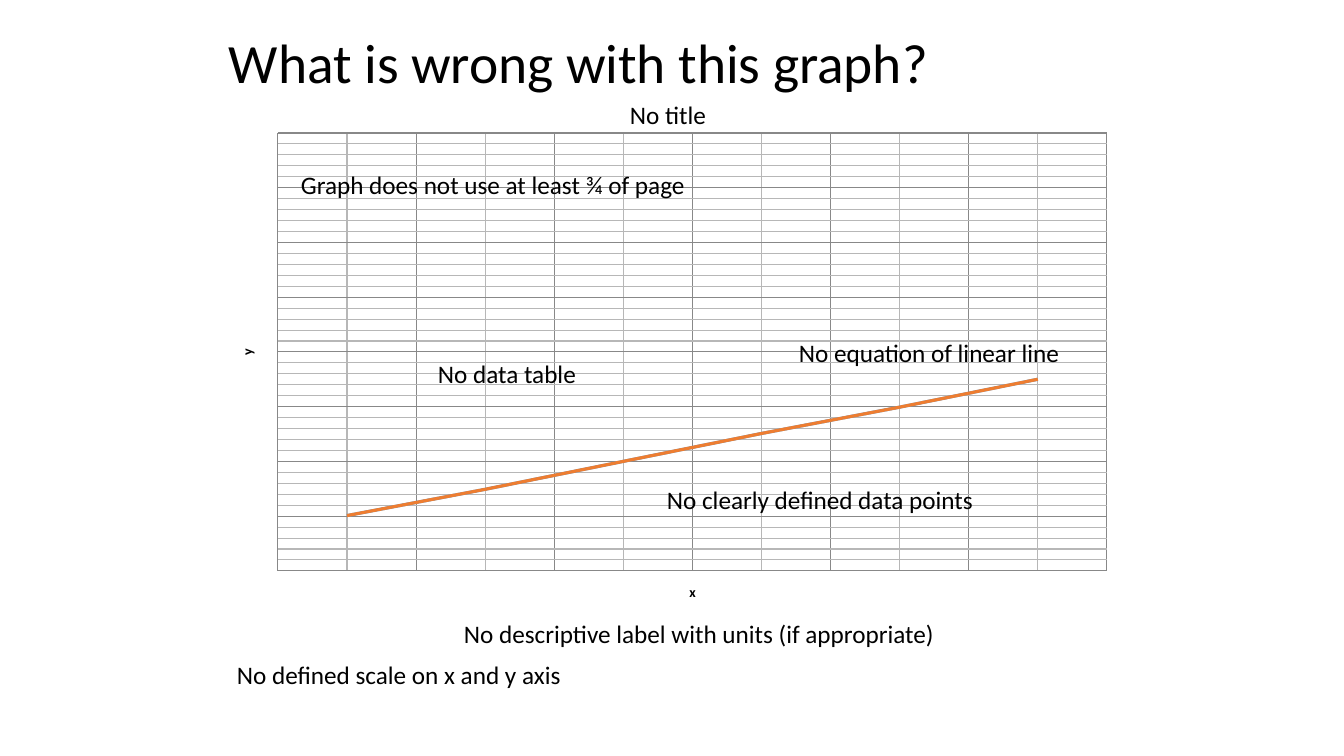
from copy import deepcopy
from lxml.etree import SubElement as Sub
from pptx import Presentation
from pptx.chart.data import CategoryChartData as Data
from pptx.dml.color import RGBColor
from pptx.enum.chart import XL_CHART_TYPE as Kind, XL_MARKER_STYLE as Mark
from pptx.enum.text import MSO_ANCHOR as Anchor, MSO_AUTO_SIZE as Fit
from pptx.oxml.ns import qn
from pptx.util import Pt

SCALE = 914400 / 100.8
FONT = "Calibri"
BLACK = RGBColor(0x00, 0x00, 0x00)
BLUE = RGBColor(0x5B, 0x9B, 0xD5)
ORANGE = RGBColor(0xED, 0x7D, 0x31)
MAJOR = RGBColor(0x88, 0x88, 0x88)
MINOR = RGBColor(0xB7, 0xB7, 0xB7)

# Remarks: text, left, top, width
NOTES = [
    ("No title", 620, 94, 98),
    ("No descriptive label with units (if appropriate)", 454, 613, 494),
    ("No data table", 428, 353, 166),
    ("No clearly defined data points", 657, 479, 331),
    ("No equation of linear line", 789, 332, 284),
    ("No defined scale on x and y axis", 227, 654, 354),
    ("Graph does not use at least ¾ of page", 291, 164, 409),
]


def px(num):
    return round(num * SCALE)


def style(font, size, bold=False):
    font.name, font.size, font.bold = FONT, Pt(size), bold
    font.color.rgb = BLACK


def add_text(slide, text, box, size):
    frame = slide.shapes.add_textbox(*map(px, box)).text_frame
    frame.text = text
    style(frame.paragraphs[0].runs[0].font, size)
    return frame


def add_title(slide, box):
    frame = add_text(slide, "What is wrong with this graph?", box, 39.6)
    frame.word_wrap = True
    frame.vertical_anchor = Anchor.MIDDLE
    frame.paragraphs[0].line_spacing = 0.9


def add_notes(slide, notes):
    for text, left, top, width in notes:
        frame = add_text(slide, text, (left, top, width, 40), 18)
        frame.word_wrap = False
        frame.auto_size = Fit.SHAPE_TO_FIT_TEXT


def set_grid(axis):
    """Style the major lines, then give the minor ones a paler version."""
    axis.has_major_gridlines = axis.has_minor_gridlines = True
    line = axis.major_gridlines.format.line
    line.color.rgb = MAJOR
    line.width = Pt(0.75)
    major, minor = (axis._element.find(qn(f"c:{size}Gridlines"))
                    for size in ("major", "minor"))
    minor.append(deepcopy(major.find(qn("c:spPr"))))
    for color in minor.iter(qn("a:srgbClr")):
        color.set("val", str(MINOR))


def set_axis(axis, name):
    set_grid(axis)
    frame = axis.axis_title.text_frame
    frame.text = name
    style(frame.paragraphs[0].runs[0].font, 10, True)
    axis.visible = False
    return frame


def set_plot(chart, box, inner):
    """Pin the inner plot area, given relative to the chart box."""
    area = chart.plots[0]._element.getparent()
    for old in area.findall(qn("c:layout")):
        area.remove(old)
    layout = Sub(area, qn("c:layout"))
    area.insert(0, layout)
    manual = Sub(layout, qn("c:manualLayout"))
    rules = [("layoutTarget", "inner"), ("xMode", "edge"), ("yMode", "edge")]
    for key, part, whole in zip("xywh", inner, (box[2], box[3]) * 2):
        rules.append((key, f"{part / whole:.4f}"))
    for key, value in rules:
        Sub(manual, qn("c:" + key)).set("val", value)


def add_graph(slide, box):
    data = Data()
    data.categories = ["1", "2", "3", "4", "5", "6"]
    for name in ("Series 1", "Series 2"):
        data.add_series(name, (17, 33, 50, 67, 83, 100))
    chart = slide.shapes.add_chart(Kind.LINE, *map(px, box), data).chart
    style(chart.font, 10)
    chart.has_title = chart.has_legend = False
    chart.plots[0].vary_by_categories = False

    # Lines
    for series, color in zip(chart.plots[0].series, (BLUE, ORANGE)):
        series.smooth = False
        series.marker.style = Mark.NONE
        series.format.line.color.rgb = color
        series.format.line.width = Pt(2.25)

    # Axes
    set_axis(chart.category_axis, "x")
    axis = chart.value_axis
    label = set_axis(axis, "y")
    label._txBody.bodyPr.set("rot", "-5400000")
    axis.minimum_scale, axis.maximum_scale = -16.67, 250
    axis.major_unit, axis.minor_unit = 33.33, 6.67
    set_plot(chart, box, (59, 9, 829, 438))


def main():
    deck = Presentation()
    deck.slide_width, deck.slide_height = px(1344), px(756)
    slide = deck.slides.add_slide(deck.slide_layouts[6])
    add_title(slide, (219, 30, 907, 71))
    add_graph(slide, (219, 124, 907, 499))
    add_notes(slide, NOTES)
    deck.save("out.pptx")


if __name__ == "__main__":
    main()
